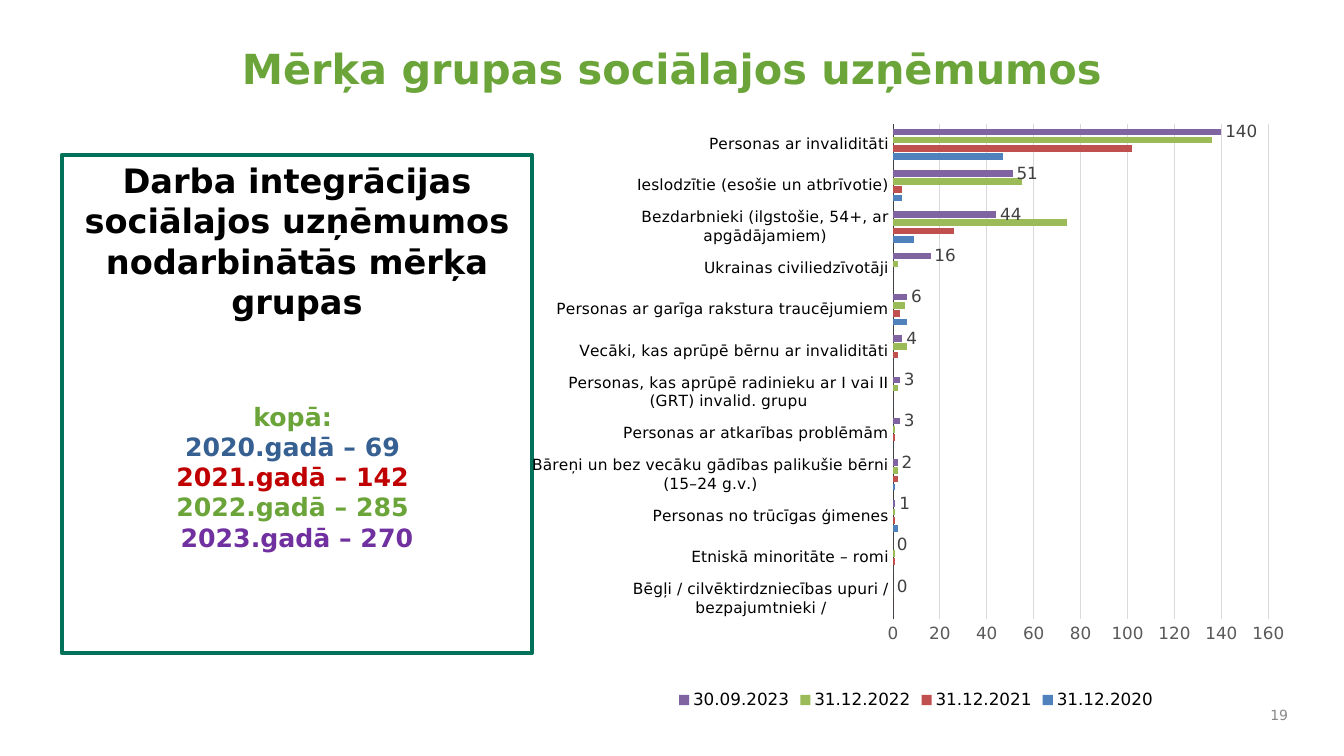
import pptx
import pptx.util
import pptx.chart.data
import pptx.dml.color
import pptx.enum.chart
import pptx.enum.shapes
import pptx.enum.text
import lxml.etree

TITLE = "Mērķa grupas sociālajos uzņēmumos"
HEADING = "Darba integrācijas sociālajos uzņēmumos nodarbinātās mērķa grupas"
TOTALS = [
    ("kopā: ", "green"),
    ("2020.gadā – 69 ", "blue"),
    ("2021.gadā – 142 ", "red"),
    ("2022.gadā – 285 ", "green"),
    ("2023.gadā – 270", "purple"),
]
PAGE = "19"
DATES = ["31.12.2020", "31.12.2021", "31.12.2022", "30.09.2023"]
GROUPS = [
    ("Bēgļi / cilvēktirdzniecības upuri / bezpajumtnieki /", 0, 0, 0, 0),
    ("Etniskā minoritāte – romi", 0, 1, 1, 0),
    ("Personas no trūcīgas ģimenes", 2, 1, 1, 1),
    ("Bāreņi un bez vecāku gādības palikušie bērni (15–24 g.v.)", 1, 2, 2, 2),
    ("Personas ar atkarības problēmām", 0, 1, 1, 3),
    ("Personas, kas aprūpē radinieku ar I vai II (GRT) invalid. grupu", 0, 0, 2, 3),
    ("Vecāki, kas aprūpē bērnu ar invaliditāti", 0, 2, 6, 4),
    ("Personas ar garīga rakstura traucējumiem", 6, 3, 5, 6),
    ("Ukrainas civiliedzīvotāji", None, None, 2, 16),
    ("Bezdarbnieki (ilgstošie, 54+, ar apgādājamiem)", 9, 26, 74, 44),
    ("Ieslodzītie (esošie un atbrīvotie)", 4, 4, 55, 51),
    ("Personas ar invaliditāti", 47, 102, 136, 140),
]

THEME = {
    "font": "DejaVu Sans",
    "colors": {
        "title": "6BA539", "green": "6BA439", "blue": "376092", "red": "C00000",
        "purple": "7030A0", "black": "000000", "border": "027159", "page": "898989",
        "axis": "404040", "ticks": "595959", "grid": "D9D9D9", "labels": "404040",
    },
    "series": ["4F81BD", "C0504D", "9BBB59", "8064A2"],
    "sizes": {"title": 29.6, "heading": 24, "totals": 18, "page": 10, "chart": 12, "category": 11},
}
SLIDE = (1344, 756)
TITLE_BOX = (212, 38, 921, 68)
PANEL = (62, 155, 470, 498)
CHART = (532, 122, 767, 592)
PAGE_BOX = (1254, 698, 44, 33)
PLOT = {"x": 0.47, "y": 0, "w": 0.49, "h": 0.84}
TOTALS_GAP = 57
EMU_PER_PX = 914400 / 100.8

ALIGN = pptx.enum.text.PP_ALIGN


def px(*lengths):
    return [pptx.util.Emu(round(n * EMU_PER_PX)) for n in lengths]


def rgb(name):
    return pptx.dml.color.RGBColor.from_string(THEME["colors"].get(name, name))


def style(font, size, color, bold=False):
    font.name = THEME["font"]
    font.size = pptx.util.Pt(THEME["sizes"][size])
    font.color.rgb = rgb(color)
    font.bold = bold


def add_run(p, text, size, color, bold=False):
    r = p.add_run()
    r.text = text
    style(r.font, size, color, bold)


def setup_frame(sp, anchor):
    tf = sp.text_frame
    tf.word_wrap = True
    tf.vertical_anchor = anchor
    return tf


def add_label(s, box, text, size, color, align, anchor, bold=False):
    tf = setup_frame(s.shapes.add_textbox(*px(*box)), anchor)
    p = tf.paragraphs[0]
    p.alignment = align
    add_run(p, text, size, color, bold)


def add_panel(s):
    sp = s.shapes.add_shape(pptx.enum.shapes.MSO_SHAPE.RECTANGLE, *px(*PANEL))
    sp.shadow.inherit = False
    sp.fill.background()
    sp.line.color.rgb = rgb("border")
    sp.line.width = pptx.util.Pt(3)
    tf = setup_frame(sp, pptx.enum.text.MSO_ANCHOR.TOP)
    p = tf.paragraphs[0]
    p.alignment = ALIGN.CENTER
    add_run(p, HEADING, "heading", "black", True)
    p = tf.add_paragraph()
    p.alignment = ALIGN.CENTER
    p.space_before = pptx.util.Pt(TOTALS_GAP)
    for i, (text, color) in enumerate(TOTALS):
        if i:
            p.add_line_break()
        add_run(p, text, "totals", color, True)


def place_plot(chart):
    plot_area = chart._chartSpace.chart.plotArea
    ns = plot_area.nsmap["c"]
    for old in plot_area.findall(f"{{{ns}}}layout"):
        plot_area.remove(old)
    layout = lxml.etree.Element(f"{{{ns}}}layout")
    manual = lxml.etree.SubElement(layout, f"{{{ns}}}manualLayout")
    settings = [("layoutTarget", "inner"), ("xMode", "edge"), ("yMode", "edge")]
    for tag, val in settings + list(PLOT.items()):
        lxml.etree.SubElement(manual, f"{{{ns}}}{tag}").set("val", str(val))
    plot_area.insert(0, layout)


def add_groups_chart(s):
    xl = pptx.enum.chart
    data = pptx.chart.data.CategoryChartData()
    names, *columns = zip(*GROUPS)
    data.categories = names
    for date, values in zip(DATES, columns):
        data.add_series(date, values)
    chart = s.shapes.add_chart(xl.XL_CHART_TYPE.BAR_CLUSTERED, *px(*CHART), data).chart
    style(chart.font, "chart", "black")
    chart.has_title = False
    chart.has_legend = True
    chart.legend.position = xl.XL_LEGEND_POSITION.BOTTOM
    chart.legend.include_in_layout = False
    style(chart.legend.font, "chart", "black")

    plot = chart.plots[0]
    plot.gap_width = 152
    plot.overlap = -25
    plot.vary_by_categories = False
    for series, color in zip(plot.series, THEME["series"]):
        series.invert_if_negative = False
        series.format.fill.solid()
        series.format.fill.fore_color.rgb = rgb(color)
    labels = plot.series[-1].data_labels
    labels.show_value = True
    labels.position = xl.XL_LABEL_POSITION.OUTSIDE_END
    style(labels.font, "chart", "labels")

    cat, val = chart.category_axis, chart.value_axis
    for axis, size, color in [(cat, "category", "black"), (val, "chart", "ticks")]:
        axis.major_tick_mark = axis.minor_tick_mark = xl.XL_TICK_MARK.NONE
        style(axis.tick_labels.font, size, color)
    cat.format.line.color.rgb = rgb("axis")
    cat.format.line.width = pptx.util.Pt(0.75)
    val.format.line.fill.background()
    val.minimum_scale, val.maximum_scale, val.major_unit = 0, 160, 20
    val.has_major_gridlines = True
    val.major_gridlines.format.line.color.rgb = rgb("grid")
    val.major_gridlines.format.line.width = pptx.util.Pt(0.75)
    place_plot(chart)


def main():
    prs = pptx.Presentation()
    prs.slide_width, prs.slide_height = px(*SLIDE)
    s = prs.slides.add_slide(prs.slide_layouts[6])
    anchor = pptx.enum.text.MSO_ANCHOR
    add_panel(s)
    add_label(s, PAGE_BOX, PAGE, "page", "page", ALIGN.RIGHT, anchor.MIDDLE)
    add_groups_chart(s)
    add_label(s, TITLE_BOX, TITLE, "title", "title", ALIGN.CENTER, anchor.TOP, True)
    prs.save("out.pptx")


if __name__ == "__main__":
    main()
